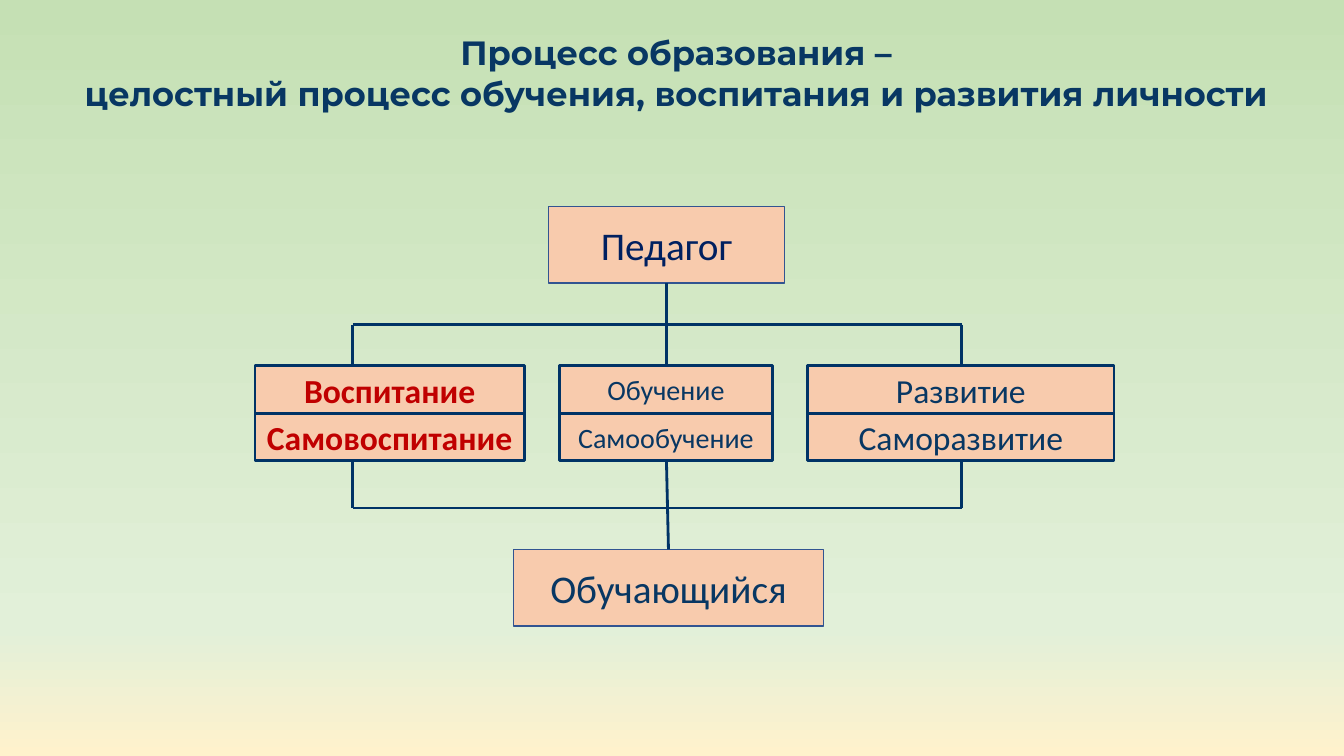
from lxml.etree import SubElement
from pptx import Presentation
from pptx.dml.color import RGBColor
from pptx.enum.shapes import MSO_CONNECTOR as Link, MSO_SHAPE as Shape
from pptx.enum.text import MSO_ANCHOR as Anchor, PP_ALIGN as Align
from pptx.oxml.ns import qn
from pptx.util import Inches, Pt

# Content
TITLE = ["Процесс образования –",
         "целостный процесс обучения, воспитания и развития личности"]
TITLE_AREA = (0.62, 0.27, 12.17, 1.31)
COLORS = {"navy": "083763", "deep": "002060", "red": "C00000", "peach": "F8CBAD",
          "edge": "325491", "link": "003366"}
BACKGROUND = [(0, "C5E0B4"), (83, "E2F0D9"), (100, "FFF2CC")]

# People: text, left, top, width, text colour
PEOPLE = [("Педагог", 5.44, 2.05, 2.34, "deep"),
          ("Обучающийся", 5.09, 5.45, 3.08, "navy")]
# Processes: stacked texts, left, width, font format, text colour
PROCESSES = [
    (("Воспитание", "Самовоспитание"), 2.53, 2.67, {"size": Pt(24), "bold": True}, "red"),
    (("Обучение", "Самообучение"), 5.55, 2.11, {"size": Pt(20)}, "navy"),
    (("Развитие", "Саморазвитие"), 8.01, 3.04, {"size": Pt(24)}, "navy"),
]
PERSON_H, ROW_H, ROWS_TOP = 0.76, 0.47, 3.63
ROWS_BOTTOM = ROWS_TOP + 2 * ROW_H
BUS_LEFT, BUS_RIGHT, BUS_TOP, BUS_BOTTOM = 3.5, 9.54, 3.22, 5.04
TRUNK = 6.61


def rgb(name):
    return RGBColor.from_string(COLORS[name])


def write(frame, lines, color, font_format):
    frame.word_wrap = True
    for number, line in enumerate(lines):
        paragraph = frame.add_paragraph() if number else frame.paragraphs[0]
        paragraph.alignment = Align.CENTER
        run = paragraph.add_run()
        run.text = line
        run.font.color.rgb = rgb(color)
        for key, value in font_format.items():
            setattr(run.font, key, value)


def add_box(slide, text, area, edge, edge_width, color, font_format):
    box = slide.shapes.add_shape(Shape.RECTANGLE, *map(Inches, area))
    box.shadow.inherit = False
    box.fill.solid()
    box.fill.fore_color.rgb = rgb("peach")
    box.line.color.rgb = rgb(edge)
    box.line.width = Pt(edge_width)
    box.text_frame.vertical_anchor = Anchor.MIDDLE
    write(box.text_frame, [text], color, {"name": "Calibri", **font_format})


def add_link(slide, *ends):
    link = slide.shapes.add_connector(Link.STRAIGHT, *map(Inches, ends))
    link.line.color.rgb = rgb("link")
    link.line.width = Pt(2)
    SubElement(link.element.spPr, qn("a:effectLst"))


def paint_background(slide):
    fill = slide.background.fill
    fill.gradient()
    fill.gradient_angle = 270
    stops = slide.element.find(".//" + qn("a:gsLst"))
    for stop in list(stops):
        stops.remove(stop)
    for percent, color in BACKGROUND:
        stop = SubElement(stops, qn("a:gs"), pos=str(percent * 1000))
        SubElement(stop, qn("a:srgbClr"), val=color)


def main():
    deck = Presentation()
    deck.slide_width, deck.slide_height = Inches(13.33), Inches(7.5)
    slide = deck.slides.add_slide(deck.slide_layouts[6])
    paint_background(slide)

    # Title
    title = slide.shapes.add_textbox(*map(Inches, TITLE_AREA))
    write(title.text_frame, TITLE, "navy",
          {"name": "Montserrat", "size": Pt(24), "bold": True})

    # Teacher and learner
    for text, left, top, width, color in PEOPLE:
        add_box(slide, text, (left, top, width, PERSON_H), "edge", 1, color, {"size": Pt(28)})

    # Process pairs
    for texts, left, width, font_format, color in PROCESSES:
        for row, text in enumerate(texts):
            area = (left, ROWS_TOP + row * ROW_H, width, ROW_H)
            add_box(slide, text, area, "link", 2, color, font_format)

    # Horizontal buses with their side branches
    for bus, rows_edge in ((BUS_TOP, ROWS_TOP), (BUS_BOTTOM, ROWS_BOTTOM)):
        add_link(slide, BUS_LEFT, bus, BUS_RIGHT, bus)
        for side in (BUS_LEFT, BUS_RIGHT):
            add_link(slide, side, bus, side, rows_edge)

    # Central trunk
    teacher_top, learner_top = (person[2] for person in PEOPLE)
    add_link(slide, TRUNK, teacher_top + PERSON_H, TRUNK, ROWS_TOP)
    add_link(slide, TRUNK, ROWS_BOTTOM, TRUNK + 0.02, learner_top)

    deck.save("out.pptx")


if __name__ == "__main__":
    main()
